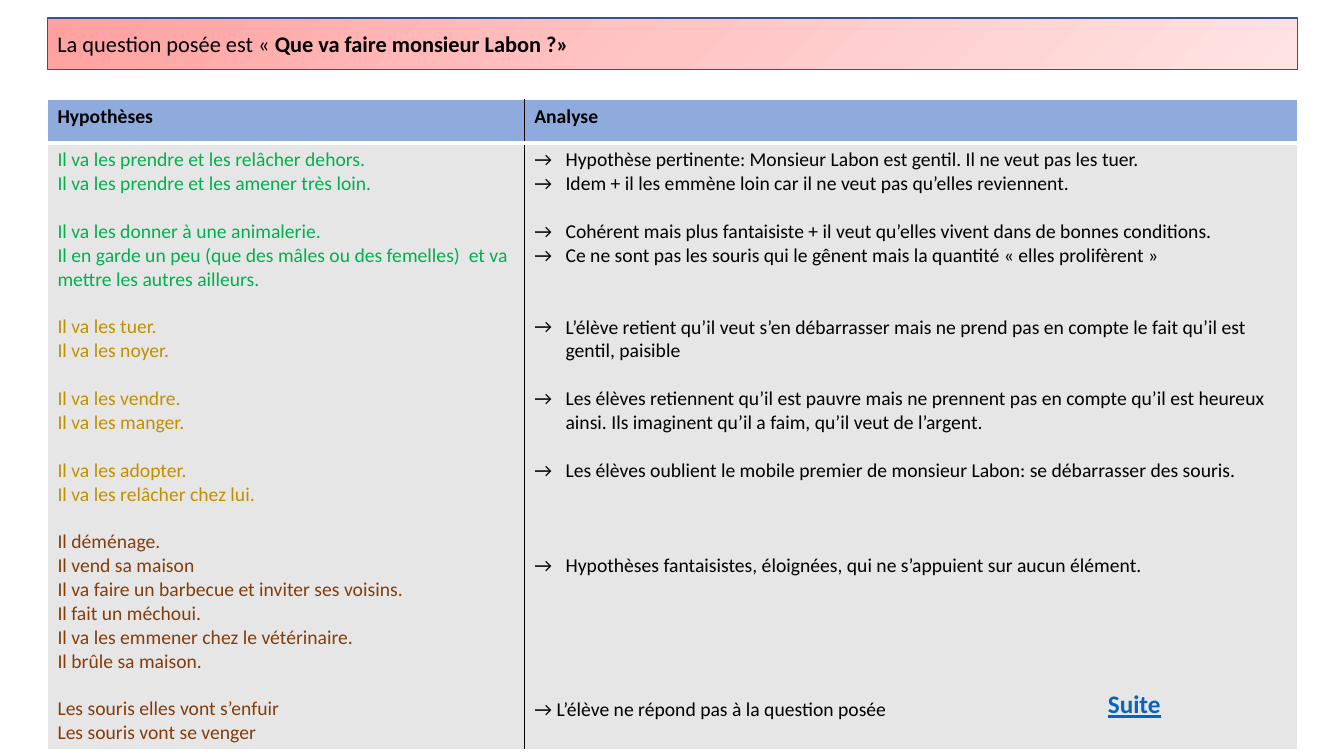
from copy import deepcopy

from lxml import etree
from pptx import Presentation
from pptx.dml.color import RGBColor
from pptx.enum.shapes import MSO_SHAPE
from pptx.enum.text import MSO_ANCHOR, MSO_AUTO_SIZE, PP_ALIGN
from pptx.oxml.ns import qn
from pptx.util import Inches, Pt

RECTANGLE = MSO_SHAPE.RECTANGLE
MIDDLE = MSO_ANCHOR.MIDDLE
LEFT = PP_ALIGN.LEFT
GROW = MSO_AUTO_SIZE.SHAPE_TO_FIT_TEXT

WIDTH, HEIGHT = Inches(13.33), Inches(7.5)
FONT = "Calibri"
LINE_POINTS = 17.1
ARROW_INDENT = Inches(0.31)
MARGIN, CONTENT = 3.53, 93.02

COLORS = {
    "black": "000000", "white": "FFFFFF", "outline": "325491",
    "header": "8FAADC", "body": "E7E6E6", "link": "0563C1",
    "relevant": "00B050", "partial": "BF9000", "fanciful": "843C0B",
}
BANNER_STOPS = [(0, "FFA0A0"), (0.5, "FFC5C5"), (1, "FFE3E3")]

HYPOTHESES = [
    ("relevant", ["Il va les prendre et les relâcher dehors.",
                  "Il va les prendre et les amener très loin."]),
    ("relevant", ["Il va les donner à une animalerie.",
                  "Il en garde un peu (que des mâles ou des femelles)  et va mettre les autres ailleurs."]),
    ("partial", ["Il va les tuer.", "Il va les noyer."]),
    ("partial", ["Il va les vendre.", "Il va les manger."]),
    ("partial", ["Il va les adopter.", "Il va les relâcher chez lui."]),
    ("fanciful", ["Il déménage.", "Il vend sa maison",
                  "Il va faire un barbecue et inviter ses voisins.",
                  "Il fait un méchoui.",
                  "Il va les emmener chez le vétérinaire.",
                  "Il brûle sa maison."]),
    ("fanciful", ["Les souris elles vont s’enfuir", "Les souris vont se venger"]),
]
ANALYSES = [
    (0, "Hypothèse pertinente: Monsieur Labon est gentil. Il ne veut pas les tuer."),
    (0, "Idem + il les emmène loin car il ne veut pas qu’elles reviennent."),
    (1, "Cohérent mais plus fantaisiste + il veut qu’elles vivent dans de bonnes conditions."),
    (0, "Ce ne sont pas les souris qui le gênent mais la quantité « elles prolifèrent »"),
    (2, "L’élève retient qu’il veut s’en débarrasser mais ne prend pas en compte le fait qu’il est gentil, paisible"),
    (1, "Les élèves retiennent qu’il est pauvre mais ne prennent pas en compte qu’il est heureux ainsi. Ils imaginent qu’il a faim, qu’il veut de l’argent."),
    (1, "Les élèves oublient le mobile premier de monsieur Labon: se débarrasser des souris."),
    (3, "Hypothèses fantaisistes, éloignées, qui ne s’appuient sur aucun élément."),
]
CONCLUSION = (5, "→ L’élève ne répond pas à la question posée")


def across(percent):
    return round(WIDTH * percent / 100)


def down(percent):
    return round(HEIGHT * percent / 100)


def place(left, top, width, height):
    return across(left), down(top), across(width), down(height)


def rgb(name):
    return RGBColor.from_string(COLORS[name])


def add_span(para, text, size=14, color="black", bold=False, underline=None):
    span = para.add_run()
    span.text = text
    font = span.font
    font.name, font.size = FONT, Pt(size)
    font.bold, font.underline = bold, underline
    font.color.rgb = rgb(color)


def add_para(frame, text, gap=0, arrow=False, **style):
    para = frame.paragraphs[0]
    if para.runs:
        para = frame.add_paragraph()
    if gap:
        para.space_before = Pt(gap * LINE_POINTS)
    if arrow:
        properties = para._p.get_or_add_pPr()
        properties.set("marL", str(ARROW_INDENT))
        properties.set("indent", str(-ARROW_INDENT))
        etree.SubElement(properties, qn("a:buFont"), typeface=FONT)
        etree.SubElement(properties, qn("a:buChar"), char="→")
    add_span(para, text, **style)


def add_banner(page):
    banner = page.shapes.add_shape(RECTANGLE, *place(MARGIN, 2.4, CONTENT, 6.8))
    banner.shadow.inherit = False
    banner.fill.gradient()
    banner.fill.gradient_angle = 315
    stop_list = banner._element.spPr.find(".//" + qn("a:gsLst"))
    stop_list.append(deepcopy(stop_list[0]))
    for stop, (position, color) in zip(banner.fill.gradient_stops, BANNER_STOPS):
        stop.position = position
        stop.color.rgb = RGBColor.from_string(color)
    banner.line.color.rgb = rgb("outline")
    banner.line.width = Pt(1)
    frame = banner.text_frame
    frame.vertical_anchor = MIDDLE
    para = frame.paragraphs[0]
    para.alignment = LEFT
    add_span(para, "La question posée est « ", size=16)
    add_span(para, "Que va faire monsieur Labon ?»", size=16, bold=True)


def style_cell(cell, fill, borders):
    properties = cell._tc.get_or_add_tcPr()
    for side, (color, points) in borders.items():
        line = etree.SubElement(properties, qn("a:ln" + side), w=str(Pt(points)))
        solid = etree.SubElement(line, qn("a:solidFill"))
        etree.SubElement(solid, qn("a:srgbClr"), val=COLORS[color])
    cell.fill.solid()
    cell.fill.fore_color.rgb = rgb(fill)


def add_analysis_table(page):
    columns, rows = (35.48, 57.54), (5.73, 79.07)
    area = place(MARGIN, 13.2, sum(columns), sum(rows))
    table = page.shapes.add_table(len(rows), len(columns), *area).table
    table.horz_banding = False
    for column, share in zip(table.columns, columns):
        column.width = across(share)
    for row, share in zip(table.rows, rows):
        row.height = down(share)
    for row, (fill, bottom) in enumerate([("header", 3), ("body", 1)]):
        for column, (left, right) in enumerate([("white", "black"), ("black", "white")]):
            borders = {"L": (left, 1), "R": (right, 1),
                       "T": ("white", 1 if row == 0 else 3), "B": ("white", bottom)}
            style_cell(table.cell(row, column), fill, borders)
    for column, title in enumerate(["Hypothèses", "Analyse"]):
        add_para(table.cell(0, column).text_frame, title, bold=True)

    hypotheses = table.cell(1, 0).text_frame
    for group, (color, lines) in enumerate(HYPOTHESES):
        for index, text in enumerate(lines):
            add_para(hypotheses, text, gap=int(group > 0 and index == 0), color=color)
    analyses = table.cell(1, 1).text_frame
    for gap, text in ANALYSES:
        add_para(analyses, text, gap=gap, arrow=True)
    gap, text = CONCLUSION
    add_para(analyses, text, gap=gap)


def add_next_label(page):
    box = page.shapes.add_textbox(*place(81.7, 90.4, 14.78, 5.33))
    frame = box.text_frame
    frame.word_wrap = True
    frame.auto_size = GROW
    add_para(frame, "Suite", size=18, color="link", bold=True, underline=True)


def main():
    deck = Presentation()
    deck.slide_width, deck.slide_height = WIDTH, HEIGHT
    page = deck.slides.add_slide(deck.slide_layouts[6])
    add_banner(page)
    add_analysis_table(page)
    add_next_label(page)
    deck.save("out.pptx")


if __name__ == "__main__":
    main()
